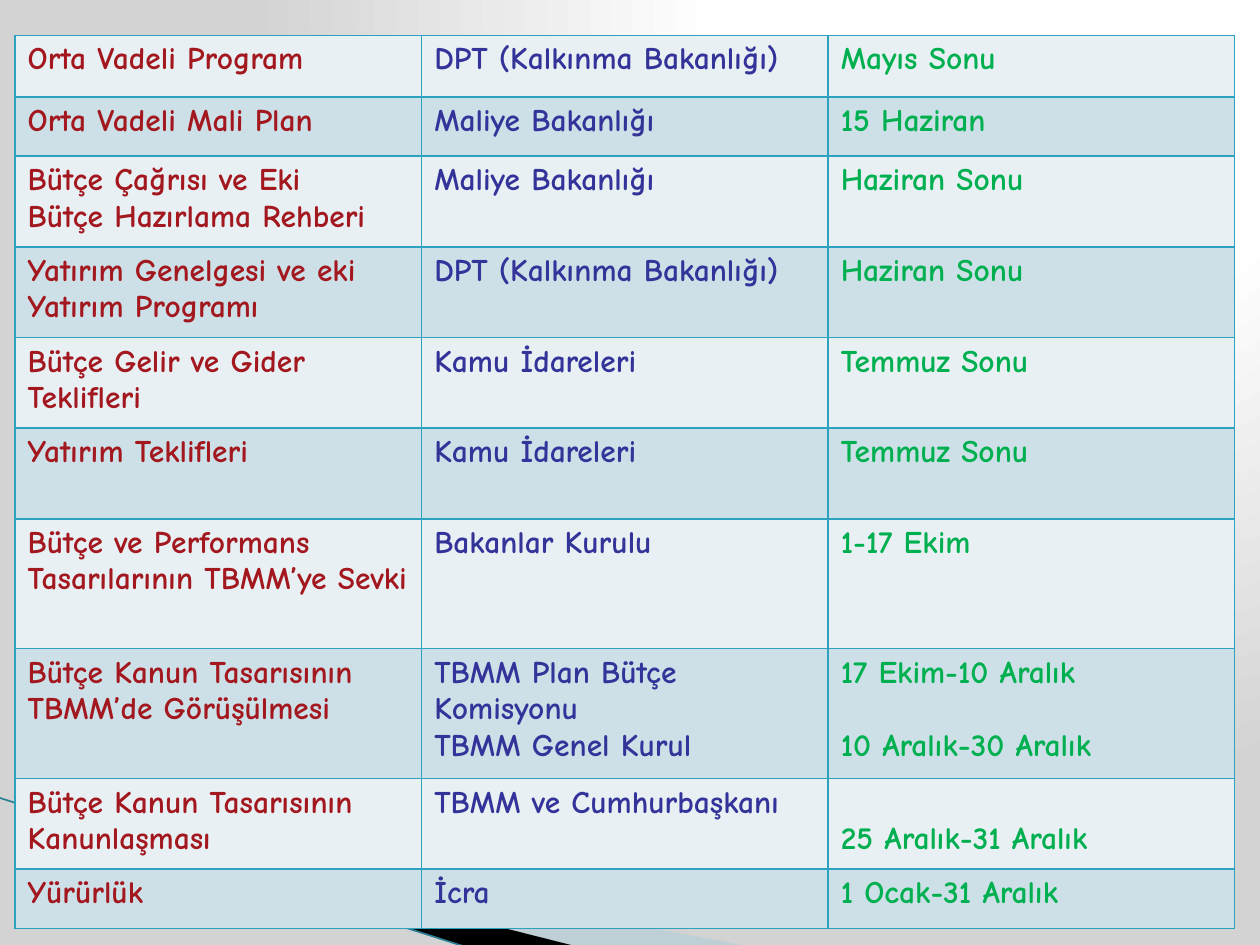
import pptx
import pptx.dml.color
import pptx.enum.shapes
import pptx.oxml
import pptx.oxml.ns
import pptx.util
from pptx.util import Inches

NS = pptx.oxml.ns.nsdecls("a")
qn = pptx.oxml.ns.qn

FONT = "Comic Neue"
BORDER = "2DA2BF"
BANDS = ["E8F0F4", "CDE0E8"]
COLUMN_COLORS = ["A3171E", "333399", "00B050"]
LINE_PITCH = 0.29

ROW_HEIGHTS = [0.49, 0.47, 0.72, 0.72, 0.72, 0.72, 1.03, 1.03, 0.72, 0.47]
CALENDAR = [
    ("Orta Vadeli Program", "DPT (Kalkınma Bakanlığı)", "Mayıs Sonu"),
    ("Orta Vadeli Mali Plan", "Maliye Bakanlığı", "15 Haziran"),
    ("Bütçe Çağrısı ve Eki\nBütçe Hazırlama Rehberi", "Maliye Bakanlığı", "Haziran Sonu"),
    ("Yatırım Genelgesi ve eki Yatırım Programı", "DPT (Kalkınma Bakanlığı)", "Haziran Sonu"),
    ("Bütçe Gelir ve Gider Teklifleri", "Kamu İdareleri", "Temmuz Sonu"),
    ("Yatırım Teklifleri", "Kamu İdareleri", "Temmuz Sonu"),
    ("Bütçe ve Performans Tasarılarının TBMM’ye Sevki", "Bakanlar Kurulu", "1-17 Ekim"),
    ("Bütçe Kanun Tasarısının TBMM’de Görüşülmesi",
     "TBMM Plan Bütçe Komisyonu\nTBMM Genel Kurul",
     "17 Ekim-10 Aralık\n10 Aralık-30 Aralık"),
    ("Bütçe Kanun Tasarısının Kanunlaşması", "TBMM ve Cumhurbaşkanı", "25 Aralık-31 Aralık"),
    ("Yürürlük", "İcra", "1 Ocak-31 Aralık"),
]
DATE_COLUMN = 2
ENACTMENT_ROW = 8


def rgb(color):
    return pptx.dml.color.RGBColor.from_string(color)


def paint_background(slide):
    slide.background.fill.gradient()
    gradient = slide.element.find(".//" + qn("a:gradFill"))
    stops = "".join(
        f'<a:gs pos="{position * 1000}"><a:srgbClr val="{color}"/></a:gs>'
        for position, color in [(0, "FFFFFF"), (40, "FFFFFF"), (100, "D3D3D3")])
    gradient.getparent().replace(gradient, pptx.oxml.parse_xml(
        f'<a:gradFill {NS} rotWithShape="1"><a:gsLst>{stops}</a:gsLst>'
        '<a:path path="circle"><a:fillToRect l="65000" t="0" r="0" b="98000"/></a:path>'
        '</a:gradFill>'))


def add_ribbon(slide, points, color, opacity=100):
    corners = [(Inches(x), Inches(y)) for x, y in points]
    builder = slide.shapes.build_freeform(*corners[0])
    builder.add_line_segments(corners[1:], close=True)
    ribbon = builder.convert_to_shape()
    ribbon.shadow.inherit = False
    ribbon.fill.solid()
    ribbon.fill.fore_color.rgb = rgb(color)
    ribbon.line.fill.background()
    if opacity < 100:
        fill_color = ribbon.fill._xPr.find(".//" + qn("a:srgbClr"))
        fill_color.append(pptx.oxml.parse_xml(f'<a:alpha {NS} val="{opacity * 1000}"/>'))


def add_corner_swoosh(slide, left, top, width, height):
    right, bottom = left + width, top + height
    add_ribbon(slide, [(left + 0.56, top + 0.18), (right, bottom - 0.01),
                       (right - 1.39, bottom - 0.01), (left + 0.56, top + 0.17)], "A0CBDC", 40)
    add_ribbon(slide, [(left + 0.54, top + 0.16), (right - 1.38, bottom - 0.01),
                       (right - 2.23, bottom), (left + 0.55, top + 0.17)], "000000")
    edge = slide.shapes.add_connector(
        pptx.enum.shapes.MSO_CONNECTOR.STRAIGHT,
        Inches(left), Inches(top), Inches(left + 3.72), Inches(bottom))
    edge.line.color.rgb = rgb("2A7F95")
    edge.line.width = pptx.util.Pt(0.95)
    edge._element.spPr.append(pptx.oxml.parse_xml(f"<a:effectLst {NS}/>"))


def set_borders(cell):
    properties = cell._tc.get_or_add_tcPr()
    for index, side in enumerate(("lnL", "lnR", "lnT", "lnB")):
        properties.insert(index, pptx.oxml.parse_xml(
            f'<a:{side} {NS} w="{pptx.util.Pt(1)}"><a:solidFill>'
            f'<a:srgbClr val="{BORDER}"/></a:solidFill></a:{side}>'))


def fill_cell(cell, text, color, band, line_gap):
    cell.fill.solid()
    cell.fill.fore_color.rgb = rgb(band)
    set_borders(cell)
    frame = cell.text_frame
    for index, line in enumerate(text.split("\n")):
        paragraph = frame.add_paragraph() if index else frame.paragraphs[0]
        if index:
            paragraph.space_before = Inches(line_gap)
        run = paragraph.add_run()
        run.text = line
        run.font.name = FONT
        run.font.size = pptx.util.Pt(18)
        run.font.bold = True
        run.font.color.rgb = rgb(color)


def add_calendar(slide, left, top, width, height):
    table = slide.shapes.add_table(
        len(CALENDAR), len(COLUMN_COLORS),
        Inches(left), Inches(top), Inches(width), Inches(height)).table
    table.first_row = False
    table.horz_banding = False
    for column in table.columns:
        column.width = Inches(width / len(COLUMN_COLORS))
    for row_index, (row_height, entries) in enumerate(zip(ROW_HEIGHTS, CALENDAR)):
        table.rows[row_index].height = Inches(row_height)
        for column_index, (text, color) in enumerate(zip(entries, COLUMN_COLORS)):
            line_gap = LINE_PITCH if column_index == DATE_COLUMN else 0
            fill_cell(table.cell(row_index, column_index), text, color,
                      BANDS[row_index % 2], line_gap)
    table.cell(ENACTMENT_ROW, DATE_COLUMN).margin_top = Inches(0.05 + LINE_PITCH)


def main():
    presentation = pptx.Presentation()
    presentation.slide_width = Inches(10)
    presentation.slide_height = Inches(7.5)
    slide = presentation.slides.add_slide(presentation.slide_layouts[6])
    paint_background(slide)
    add_corner_swoosh(slide, -0.01, 6.33, 5.96, 1.19)
    add_calendar(slide, 0.12, 0.28, 9.68, sum(ROW_HEIGHTS))
    presentation.save("out.pptx")


if __name__ == "__main__":
    main()
